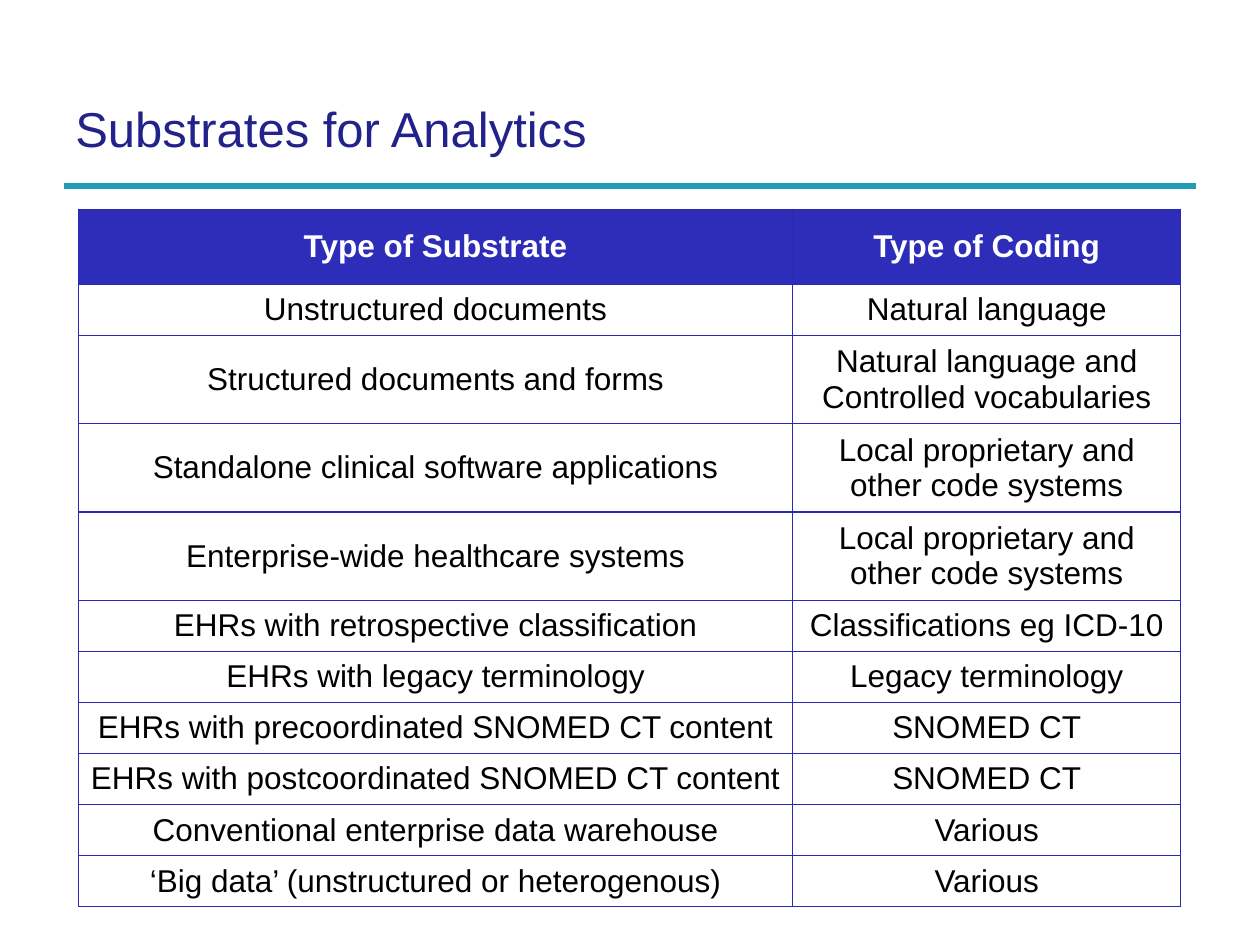
from dataclasses import dataclass

from lxml import etree
from pptx import Presentation
from pptx import util as u
from pptx.dml.color import RGBColor
from pptx.enum import shapes, text
from pptx.oxml import ns


@dataclass(frozen=True)
class Theme:
    """Hold the colours, font and type sizes of the slide."""
    font: str = "Arial"
    title_size: float = 28
    table_size: float = 18
    border_width: float = 0.75
    title: str = "22228B"
    rule: str = "229BB8"
    border: str = "2929B8"
    header: str = "2D2DB9"
    header_text: str = "FFFFFF"
    body: str = "FFFFFF"
    body_text: str = "000000"


THEME = Theme()
COLUMN_WIDTHS = (408.25, 221.75)
HEADER_HEIGHT, ROW_HEIGHT, TWO_LINE_HEIGHT = 43, 29.2, 47.6
TWO_LINE_ROWS = (2, 3, 4)
ROWS = (
    ("Type of Substrate", "Type of Coding"),
    ("Unstructured documents", "Natural language"),
    ("Structured documents and forms", "Natural language and Controlled vocabularies"),
    ("Standalone clinical software applications", "Local proprietary and other code systems"),
    ("Enterprise-wide healthcare systems", "Local proprietary and other code systems"),
    ("EHRs with retrospective classification", "Classifications eg ICD-10"),
    ("EHRs with legacy terminology", "Legacy terminology"),
    ("EHRs with precoordinated SNOMED CT content", "SNOMED CT"),
    ("EHRs with postcoordinated SNOMED CT content", "SNOMED CT"),
    ("Conventional enterprise data warehouse", "Various"),
    ("‘Big data’ (unstructured or heterogenous)", "Various"),
)


def style_paragraph(paragraph, size, color, bold=False):
    """Set the font of a whole paragraph."""
    font = paragraph.font
    font.name, font.size, font.bold = THEME.font, u.Pt(size), bold
    font.color.rgb = RGBColor.from_string(color)


def add_title(slide, words):
    """Add the title as a vertically centred text box."""
    frame = slide.shapes.add_textbox(u.Pt(36), u.Pt(50.4), u.Pt(648), u.Pt(45.4)).text_frame
    frame.word_wrap = True
    frame.vertical_anchor = text.MSO_ANCHOR.MIDDLE
    frame.text = words
    style_paragraph(frame.paragraphs[0], THEME.title_size, THEME.title)


def add_rule(slide):
    """Add the horizontal rule below the title."""
    rule = slide.shapes.add_connector(
        shapes.MSO_CONNECTOR.STRAIGHT, u.Pt(36.75), u.Pt(106.25), u.Pt(683.25), u.Pt(106.25))
    rule.line.width = u.Pt(3)
    rule.line.color.rgb = RGBColor.from_string(THEME.rule)
    etree.SubElement(rule.element.spPr, ns.qn("a:effectLst"))


def add_borders(cell):
    """Draw a thin line on every side of a cell."""
    properties = cell._tc.get_or_add_tcPr()
    for position, side in enumerate(("lnL", "lnR", "lnT", "lnB")):
        line = etree.Element(ns.qn(f"a:{side}"), w=str(u.Pt(THEME.border_width)))
        fill = etree.SubElement(line, ns.qn("a:solidFill"))
        etree.SubElement(fill, ns.qn("a:srgbClr"), val=THEME.border)
        properties.insert(position, line)


def fill_cell(cell, words, is_header):
    """Write and style one table cell."""
    cell.text = words
    cell.vertical_anchor = text.MSO_ANCHOR.MIDDLE
    cell.margin_left = cell.margin_right = u.Pt(6)
    cell.fill.solid()
    cell.fill.fore_color.rgb = RGBColor.from_string(THEME.header if is_header else THEME.body)
    paragraph = cell.text_frame.paragraphs[0]
    paragraph.alignment = text.PP_ALIGN.CENTER
    color = THEME.header_text if is_header else THEME.body_text
    style_paragraph(paragraph, THEME.table_size, color, is_header)
    add_borders(cell)


def row_height(index):
    """Return the height of a table row in points."""
    if index == 0:
        return HEADER_HEIGHT
    return TWO_LINE_HEIGHT if index in TWO_LINE_ROWS else ROW_HEIGHT


def add_substrate_table(slide):
    """Add the table that pairs substrates with their coding."""
    heights = [row_height(index) for index in range(len(ROWS))]
    table = slide.shapes.add_table(
        len(ROWS), len(COLUMN_WIDTHS), u.Pt(44.75), u.Pt(119.5),
        u.Pt(sum(COLUMN_WIDTHS)), u.Pt(sum(heights))).table
    table.horz_banding = False
    for column, width in zip(table.columns, COLUMN_WIDTHS):
        column.width = u.Pt(width)
    for index, (row, words) in enumerate(zip(table.rows, ROWS)):
        row.height = u.Pt(heights[index])
        for cell, entry in zip(row.cells, words):
            fill_cell(cell, entry, index == 0)


def main():
    """Build and save the slide."""
    presentation = Presentation()
    presentation.slide_width, presentation.slide_height = u.Pt(720), u.Pt(540)
    slide = presentation.slides.add_slide(presentation.slide_layouts[6])
    add_rule(slide)
    add_title(slide, "Substrates for Analytics")
    add_substrate_table(slide)
    presentation.save("out.pptx")


if __name__ == "__main__":
    main()
